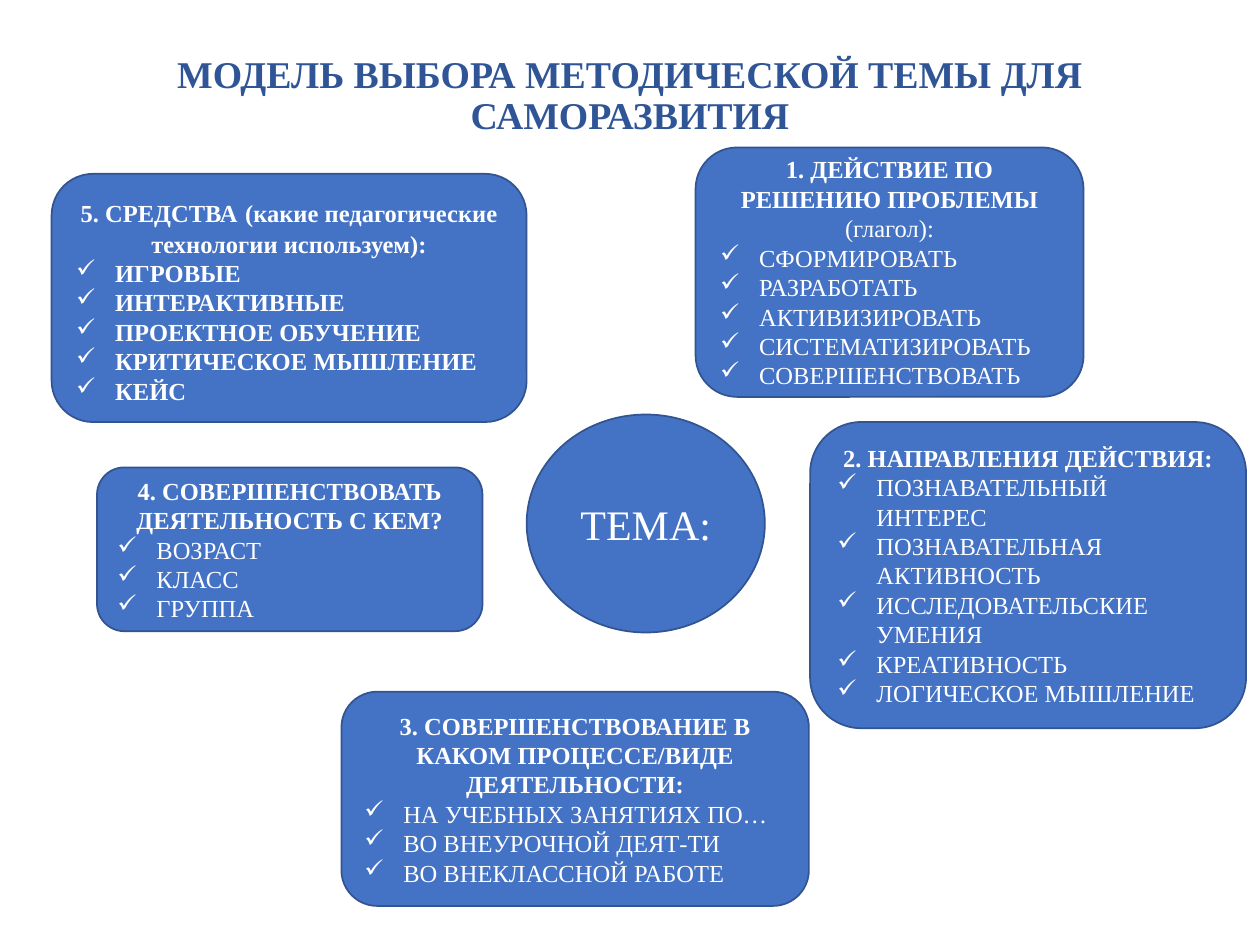
from lxml.etree import SubElement
from pptx import Presentation
from pptx.dml.color import RGBColor
from pptx.enum.shapes import MSO_SHAPE as Shape
from pptx.enum.text import MSO_ANCHOR as Anchor, PP_ALIGN as Align
from pptx.oxml.ns import qn
from pptx.util import Inches, Pt

COLORS = {"title": "2F5597", "fill": "4472C4", "line": "325491", "text": "FFFFFF"}
SERIF, SANS = "Times New Roman", "Calibri"
COLUMNS, ROWS = 100, 75
WIDTH, HEIGHT = Inches(10), Inches(7.5)

TITLE = "МОДЕЛЬ ВЫБОРА МЕТОДИЧЕСКОЙ ТЕМЫ ДЛЯ САМОРАЗВИТИЯ"
TITLE_BOX = (6.9, 4, 86.2, 7.4)
THEME_BOX = (41.8, 32.9, 18.9, 17.3)
BOLD = {"bold": True}
PLAIN = {"bold": False}
WIDE_GAP = {"bold": True, "size": 18, "font": SANS}

CARDS = [
    ((64.3, 33.5, 34.6, 24.3),
     [("2. НАПРАВЛЕНИЯ ДЕЙСТВИЯ:", BOLD)], PLAIN,
     ["ПОЗНАВАТЕЛЬНЫЙ ИНТЕРЕС", "ПОЗНАВАТЕЛЬНАЯ АКТИВНОСТЬ",
      "ИССЛЕДОВАТЕЛЬСКИЕ УМЕНИЯ", "КРЕАТИВНОСТЬ", "ЛОГИЧЕСКОЕ МЫШЛЕНИЕ"]),
    ((55.2, 11.7, 30.8, 19.8),
     [("1. ДЕЙСТВИЕ ПО РЕШЕНИЮ ПРОБЛЕМЫ ", BOLD), ("(глагол):", PLAIN)], PLAIN,
     ["СФОРМИРОВАТЬ", "РАЗРАБОТАТЬ", "АКТИВИЗИРОВАТЬ",
      "СИСТЕМАТИЗИРОВАТЬ", "СОВЕРШЕНСТВОВАТЬ"]),
    ((27.1, 54.9, 37.1, 17),
     [("3. СОВЕРШЕНСТВОВАНИЕ В КАКОМ ПРОЦЕССЕ/ВИДЕ ДЕЯТЕЛЬНОСТИ:", BOLD)], PLAIN,
     ["НА УЧЕБНЫХ ЗАНЯТИЯХ ПО…", "ВО ВНЕУРОЧНОЙ ДЕЯТ-ТИ", "ВО ВНЕКЛАССНОЙ РАБОТЕ"]),
    ((7.7, 37.1, 30.6, 13),
     [("4. СОВЕРШЕНСТВОВАТЬ ДЕЯТЕЛЬНОСТЬ С КЕМ?", BOLD)], PLAIN,
     ["ВОЗРАСТ", "КЛАСС", "ГРУППА"]),
    ((4.1, 13.8, 37.7, 19.7),
     [("5. СРЕДСТВА", BOLD), (" ", WIDE_GAP),
      ("(какие педагогические технологии используем):", BOLD)], BOLD,
     ["ИГРОВЫЕ", "ИНТЕРАКТИВНЫЕ", "ПРОЕКТНОЕ ОБУЧЕНИЕ",
      "КРИТИЧЕСКОЕ МЫШЛЕНИЕ", "КЕЙС"]),
]


def place(box):
    """Turn a box in grid columns and rows into slide lengths."""
    left, top, width, height = box
    return (int(left * WIDTH / COLUMNS), int(top * HEIGHT / ROWS),
            int(width * WIDTH / COLUMNS), int(height * HEIGHT / ROWS))


def add_run(paragraph, text, size=14, font=SERIF, bold=False, color="text"):
    """Append a formatted run to a paragraph."""
    run = paragraph.add_run()
    run.text = text
    run.font.size = Pt(size)
    run.font.name = font
    run.font.bold = bold
    run.font.color.rgb = RGBColor.from_string(COLORS[color])


def add_check_mark(paragraph):
    """Give a paragraph a hanging check-mark bullet."""
    properties = paragraph._p.get_or_add_pPr()
    properties.set("marL", str(Inches(0.31)))
    properties.set("indent", str(-Inches(0.31)))
    SubElement(properties, qn("a:buChar")).set("char", "✓")


def add_filled_shape(slide, kind, box):
    """Add a filled, outlined shape and return its text frame."""
    shape = slide.shapes.add_shape(kind, *place(box))
    shape.shadow.inherit = False
    shape.fill.solid()
    shape.fill.fore_color.rgb = RGBColor.from_string(COLORS["fill"])
    shape.line.color.rgb = RGBColor.from_string(COLORS["line"])
    shape.line.width = Pt(1)
    shape.text_frame.word_wrap = True
    shape.text_frame.vertical_anchor = Anchor.MIDDLE
    return shape.text_frame


def add_title(slide, box):
    """Add the centred slide title."""
    text_frame = slide.shapes.add_textbox(*place(box)).text_frame
    text_frame.word_wrap = True
    text_frame.vertical_anchor = Anchor.MIDDLE
    paragraph = text_frame.paragraphs[0]
    paragraph.alignment = Align.CENTER
    paragraph.line_spacing = 0.9
    add_run(paragraph, TITLE, size=21.6, bold=True, color="title")


def add_theme(slide, box):
    """Add the central ellipse."""
    paragraph = add_filled_shape(slide, Shape.OVAL, box).paragraphs[0]
    paragraph.alignment = Align.CENTER
    add_run(paragraph, "ТЕМА:", size=24)


def add_card(slide, box, heading, item_style, items):
    """Add a rounded card with a heading and a checklist."""
    text_frame = add_filled_shape(slide, Shape.ROUNDED_RECTANGLE, box)
    paragraph = text_frame.paragraphs[0]
    paragraph.alignment = Align.CENTER
    for text, style in heading:
        add_run(paragraph, text, **style)
    for item in items:
        paragraph = text_frame.add_paragraph()
        paragraph.alignment = Align.LEFT
        add_check_mark(paragraph)
        add_run(paragraph, item, **item_style)


def main():
    """Build and save the slide."""
    presentation = Presentation()
    presentation.slide_width, presentation.slide_height = WIDTH, HEIGHT
    slide = presentation.slides.add_slide(presentation.slide_layouts[6])
    add_title(slide, TITLE_BOX)
    add_theme(slide, THEME_BOX)
    for card in CARDS:
        add_card(slide, *card)
    presentation.save("out.pptx")


if __name__ == "__main__":
    main()
